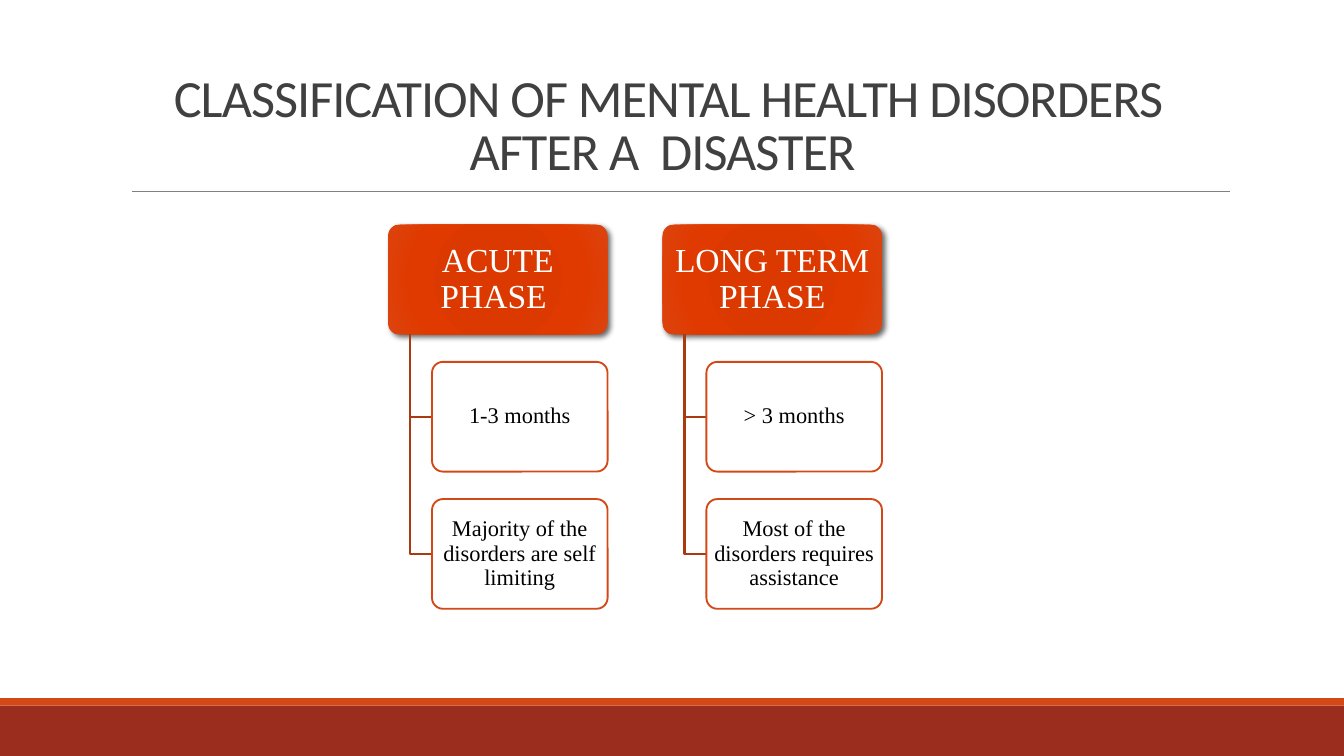
import pptx
import pptx.util
import pptx.oxml
import pptx.oxml.ns
import pptx.dml.color
import pptx.enum.shapes
import pptx.enum.text

Pt = pptx.util.Pt
SHAPE = pptx.enum.shapes.MSO_SHAPE
ANCHOR = pptx.enum.text.MSO_ANCHOR
NS = pptx.oxml.ns.nsdecls("a")

HEAD_W, BOX_H = 117.6, 58.8
COLUMN_STEP, ROW_STEP = HEAD_W * 1.25, BOX_H * 1.25
LEFT, TOP = 207.9, 120.4
STEM, INDENT = HEAD_W * 0.1, HEAD_W * 0.2
GRADIENT = [(0, "DA3900"), (34, "DC3900"), (70, "E03A00"), (100, "DC440E")]
PHASES = [
    ("ACUTE PHASE ", ["1-3 months", "Majority of the disorders are self limiting"]),
    ("LONG TERM PHASE", ["> 3 months", "Most of the disorders requires assistance"]),
]


def rgb(value):
    return pptx.dml.color.RGBColor.from_string(value)


def set_line(sp, color, width):
    sp.line.color.rgb = rgb(color)
    sp.line.width = Pt(width)


def add_text(sp, text, font, size, color, anchor, spacing):
    tf = sp.text_frame
    tf.word_wrap = True
    tf.vertical_anchor = anchor
    p = tf.paragraphs[0]
    p.alignment = pptx.enum.text.PP_ALIGN.CENTER
    p.line_spacing = spacing
    r = p.add_run()
    r.text = text
    r.font.name = font
    r.font.size = Pt(size)
    r.font.color.rgb = rgb(color)
    return r


def add_box(s, kind, x, y, w, h, fill):
    sp = s.shapes.add_shape(kind, Pt(x), Pt(y), Pt(w), Pt(h))
    sp.shadow.inherit = False
    sp.fill.solid()
    sp.fill.fore_color.rgb = rgb(fill)
    sp.line.fill.background()
    return sp


def add_card(s, x, y, w, text, size, color, inset):
    sp = add_box(s, SHAPE.ROUNDED_RECTANGLE, x, y, w, BOX_H, "FFFFFF")
    sp.adjustments[0] = 0.1
    tf = sp.text_frame
    tf.margin_left = tf.margin_right = Pt(inset)
    tf.margin_top = tf.margin_bottom = Pt(inset * 0.7)
    add_text(sp, text, "Times New Roman", size, color, ANCHOR.MIDDLE, 0.9)
    return sp


def add_head(s, x, y, text):
    sp = add_card(s, x, y, HEAD_W, text, 18, "FFFFFF", 2.7)
    stops = "".join(
        f'<a:gs pos="{pos * 1000}"><a:srgbClr val="{color}"/></a:gs>'
        for pos, color in GRADIENT
    )
    grad = pptx.oxml.parse_xml(
        f'<a:gradFill {NS} rotWithShape="1"><a:gsLst>{stops}</a:gsLst>'
        '<a:path path="circle"><a:fillToRect l="100000" t="100000" r="100000" b="100000"/>'
        "</a:path></a:gradFill>"
    )
    spPr = sp.element.spPr
    spPr.replace(spPr.find(pptx.oxml.ns.qn("a:solidFill")), grad)
    shadow = pptx.oxml.parse_xml(
        f'<a:outerShdw {NS} blurRad="{Pt(3)}" dist="{Pt(2)}" dir="2700000" rotWithShape="0">'
        '<a:srgbClr val="000000"><a:alpha val="60000"/></a:srgbClr></a:outerShdw>'
    )
    spPr.find(pptx.oxml.ns.qn("a:effectLst")).append(shadow)


def add_detail(s, x, y, text):
    sp = add_card(s, x, y, HEAD_W * 0.8, text, 12, "000000", 2)
    set_line(sp, "D34817", 1)
    color = sp.element.spPr.find(".//" + pptx.oxml.ns.qn("a:srgbClr"))
    color.append(pptx.oxml.parse_xml(f'<a:alpha {NS} val="90000"/>'))


def add_elbow(s, x, y, end_x, end_y):
    fb = s.shapes.build_freeform(Pt(x), Pt(y))
    fb.add_line_segments([(Pt(x), Pt(end_y)), (Pt(end_x), Pt(end_y))], close=False)
    sp = fb.convert_to_shape()
    sp.shadow.inherit = False
    sp.fill.background()
    set_line(sp, "A93A12", 1.25)


def add_phase(s, x, title, details):
    add_head(s, x, TOP, title)
    for row, text in enumerate(details, 1):
        y = TOP + row * ROW_STEP
        add_elbow(s, x + STEM, TOP + BOX_H, x + INDENT, y + BOX_H / 2)
        add_detail(s, x + INDENT, y, text)


def add_rule(s, x, y, end_x):
    line = s.shapes.add_connector(
        pptx.enum.shapes.MSO_CONNECTOR.STRAIGHT, Pt(x), Pt(y), Pt(end_x), Pt(y)
    )
    set_line(line, "808080", 0.5)
    line.element.spPr.append(pptx.oxml.parse_xml(f"<a:effectLst {NS}/>"))


def add_title(s, text):
    sp = s.shapes.add_textbox(Pt(49.7), Pt(21.6), Pt(616.3), Pt(79.2))
    r = add_text(sp, text, "Calibri", 28, "404040", ANCHOR.BOTTOM, 0.85)
    r.font.element.set("spc", "-50") if hasattr(r.font, "element") else r._r.get_or_add_rPr().set("spc", "-50")


def main():
    prs = pptx.Presentation()
    prs.slide_width, prs.slide_height = Pt(720), Pt(405)
    s = prs.slides.add_slide(prs.slide_layouts[6])
    add_box(s, SHAPE.RECTANGLE, 0, 378, 720, 27, "9B2D1F")
    add_box(s, SHAPE.RECTANGLE, 0, 374, 720, 4, "D34817")
    add_rule(s, 70.7, 102.6, 659)
    add_title(s, "CLASSIFICATION OF MENTAL HEALTH DISORDERS AFTER A  DISASTER ")
    for column, (title, details) in enumerate(PHASES):
        add_phase(s, LEFT + column * COLUMN_STEP, title, details)
    prs.save("out.pptx")


if __name__ == "__main__":
    main()
